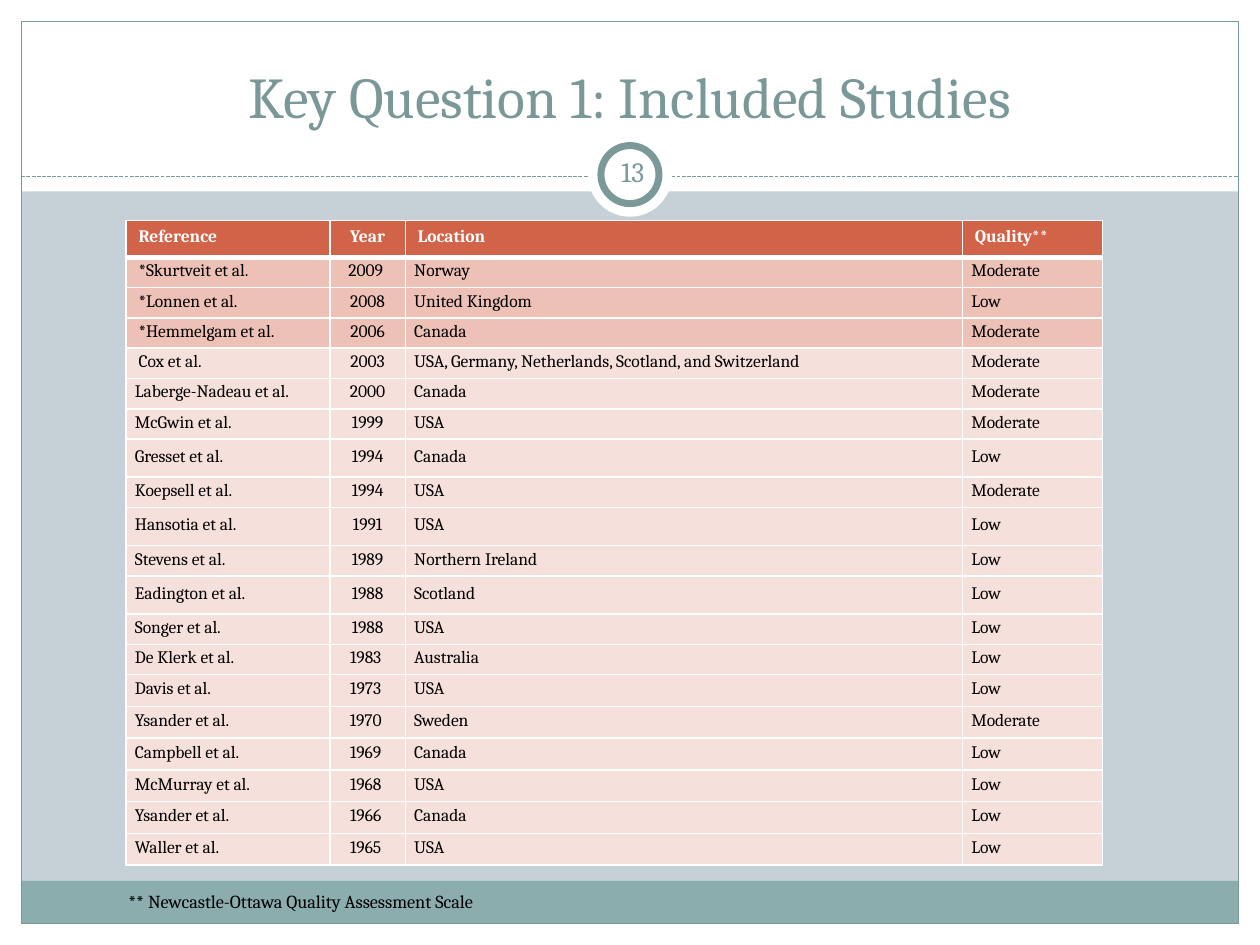
from lxml.etree import SubElement
from pptx import Presentation
from pptx.dml.color import RGBColor
from pptx.enum.dml import MSO_LINE
from pptx.enum.shapes import MSO_CONNECTOR, MSO_SHAPE
from pptx.enum.text import MSO_ANCHOR, MSO_AUTO_SIZE, PP_ALIGN
from pptx.oxml.ns import qn
from pptx.util import Cm, Pt

HUES = {"paper": "FFFFFF", "ground": "C5D1D7", "band": "8CADAE", "rule": "7C999A",
        "title": "7B9899", "head": "D16349", "mark": "EDC1B6", "plain": "F6E0DB",
        "ink": "000000"}
FACE = "Cambria"
HEADS = ("Reference", "Year", "Location", "Quality**")
ROWS = (
    ("*Skurtveit et al.", "2009 ", "Norway", "Moderate"),
    ("*Lonnen et al.", "2008", "United Kingdom", "Low"),
    ("*Hemmelgam et al.", "2006", "Canada", "Moderate"),
    ("Cox et al.", "2003", "USA, Germany, Netherlands, Scotland, and Switzerland", "Moderate"),
    ("Laberge-Nadeau et al.", "2000", "Canada", "Moderate"),
    ("McGwin et al.", "1999", "USA", "Moderate"),
    ("Gresset et al.", "1994", "Canada", "Low"),
    ("Koepsell et al.", "1994", "USA", "Moderate"),
    ("Hansotia et al.", "1991", "USA", "Low"),
    ("Stevens et al.", "1989", "Northern Ireland", "Low"),
    ("Eadington et al.", "1988", "Scotland", "Low"),
    ("Songer et al.", "1988", "USA", "Low"),
    ("De Klerk et al.", "1983 ", "Australia", "Low"),
    ("Davis et al.", "1973 ", "USA", "Low"),
    ("Ysander et al.", "1970 ", "Sweden", "Moderate"),
    ("Campbell et al.", "1969 ", "Canada", "Low"),
    ("McMurray et al.", "1968 ", "USA", "Low"),
    ("Ysander et al.", "1966 ", "Canada", "Low"),
    ("Waller et al.", "1965 ", "USA", "Low"),
)
WIDTHS = (4.11, 1.52, 11.23, 2.82)
HIGHS = [0.74] + [0.61] * 6 + [0.77, 0.61] * 2 + [0.77] + [0.61] * 2 + [0.64] * 6


def hue(name):
    """Return the named colour."""
    return RGBColor.from_string(HUES[name])


def apply(item, form):
    """Set each format value on the item."""
    for key, value in form.items():
        setattr(item, key, value)


def write(frame, text, size, tint, bold=False, para=None):
    """Fill a text frame with one styled line."""
    line = frame.paragraphs[0]
    apply(line, para or {})
    run = line.add_run()
    run.text = text
    apply(run.font, {"name": FACE, "size": Pt(size), "bold": bold})
    run.font.color.rgb = hue(tint)


def label(slide, box, text, size, tint, form, para=None):
    """Add a text box."""
    frame = slide.shapes.add_textbox(*map(Cm, box)).text_frame
    apply(frame, {"word_wrap": True, **form})
    write(frame, text, size, tint, para=para)


def block(slide, box, fill=None, line=None, kind=MSO_SHAPE.RECTANGLE):
    """Add a flat shape with an optional fill and line width."""
    shape = slide.shapes.add_shape(kind, *map(Cm, box))
    shape.shadow.inherit = False
    if fill:
        shape.fill.solid()
        shape.fill.fore_color.rgb = hue(fill)
    else:
        shape.fill.background()
    if line:
        shape.line.width = Pt(line)
        shape.line.color.rgb = hue("rule")
    else:
        shape.line.fill.background()


def border(slide, box, edge=0.43, top=3.86):
    """Place the white margins, lower band and outline."""
    x, y, w, h = box
    for part in ((x, y + h - edge, w, edge), (x, y, w, top),
                 (x, y, edge, h), (x + w - edge, y, edge, h)):
        block(slide, part, "paper")
    block(slide, (x + edge, y + h - 1.29, w - 2 * edge, 0.86), "band")
    block(slide, (x + edge, y + edge, w - 2 * edge, h - 2 * edge), line=0.75)


def header(slide, box):
    """Place the dashed rule, number badge and title."""
    x, y, w, h = box
    mid, base = x + w / 2, y + h
    rule = slide.shapes.add_connector(
        MSO_CONNECTOR.STRAIGHT, Cm(x), Cm(base), Cm(x + w), Cm(base))
    apply(rule.line, {"width": Pt(0.75), "dash_style": MSO_LINE.SQUARE_DOT})
    rule.line.color.rgb = hue("rule")
    SubElement(rule._element.spPr, qn("a:effectLst"))
    for size, line in ((1.7, None), (1.17, 4)):
        block(slide, (mid - size / 2, base - 0.04 - size / 2, size, size),
              "paper", line, MSO_SHAPE.OVAL)
    middle = {"alignment": PP_ALIGN.CENTER}
    label(slide, (x + 0.41, y + 0.21, w - 0.82, 2.11), "Key Question 1: Included Studies",
          33, "title", {"vertical_anchor": MSO_ANCHOR.BOTTOM}, middle)
    sides = ("left", "top", "right", "bottom")
    label(slide, (mid - 0.58, base - 0.71, 1.27, 1.22), "13", 16, "rule",
          {"vertical_anchor": MSO_ANCHOR.MIDDLE,
           **{f"margin_{side}": Cm(0.13) for side in sides}}, middle)


def edges(cell, base):
    """Draw white cell borders with a given lower width."""
    props = cell._tc.get_or_add_tcPr()
    for side, width in (("L", 1), ("R", 1), ("T", 1), ("B", base)):
        line = SubElement(props, qn(f"a:ln{side}"), w=str(Pt(width)))
        fill = SubElement(line, qn("a:solidFill"))
        SubElement(fill, qn("a:srgbClr"), val=HUES["paper"])


def grid(slide, box):
    """Place the table of studies."""
    table = slide.shapes.add_table(len(HIGHS), len(WIDTHS), *map(Cm, box)).table
    for col, width in zip(table.columns, WIDTHS):
        col.width = Cm(width)
    for row, high in zip(table.rows, HIGHS):
        row.height = Cm(high)
    tight = {"margin_left": Cm(0.18), "margin_right": Cm(0.18),
             "margin_top": 0, "margin_bottom": 0}
    for r, row in enumerate((HEADS,) + ROWS):
        tone = "head" if r == 0 else "mark" if row[0].startswith("*") else "plain"
        for c, text in enumerate(row):
            cell = table.cell(r, c)
            edges(cell, 1 if r else 3)
            cell.fill.solid()
            cell.fill.fore_color.rgb = hue(tone)
            para = {"alignment": PP_ALIGN.CENTER if c == 1 else PP_ALIGN.LEFT}
            if r:
                para["line_spacing"] = Pt(10)
                cell.vertical_anchor = MSO_ANCHOR.MIDDLE
                if c or r > 4:
                    apply(cell, tight)
            write(cell.text_frame, text, 10, "ink" if r else "paper", r == 0, para)


def footer(slide, box):
    """Place the note on the quality scale."""
    label(slide, box, "** Newcastle-Ottawa Quality Assessment Scale", 10.5, "ink",
          {"auto_size": MSO_AUTO_SIZE.SHAPE_TO_FIT_TEXT})


def main():
    """Build and save the slide."""
    deck = Presentation()
    apply(deck, {"slide_width": Cm(25.4), "slide_height": Cm(19.05)})
    slide = deck.slides.add_slide(deck.slide_layouts[6])
    slide.background.fill.solid()
    slide.background.fill.fore_color.rgb = hue("ground")
    border(slide, (0, 0, 25.4, 19.05))
    header(slide, (0.43, 0.43, 24.54, 3.13))
    grid(slide, (2.54, 4.45, sum(WIDTHS), sum(HIGHS)))
    footer(slide, (2.34, 17.83, 15.04, 0.71))
    deck.save("out.pptx")


if __name__ == "__main__":
    main()
